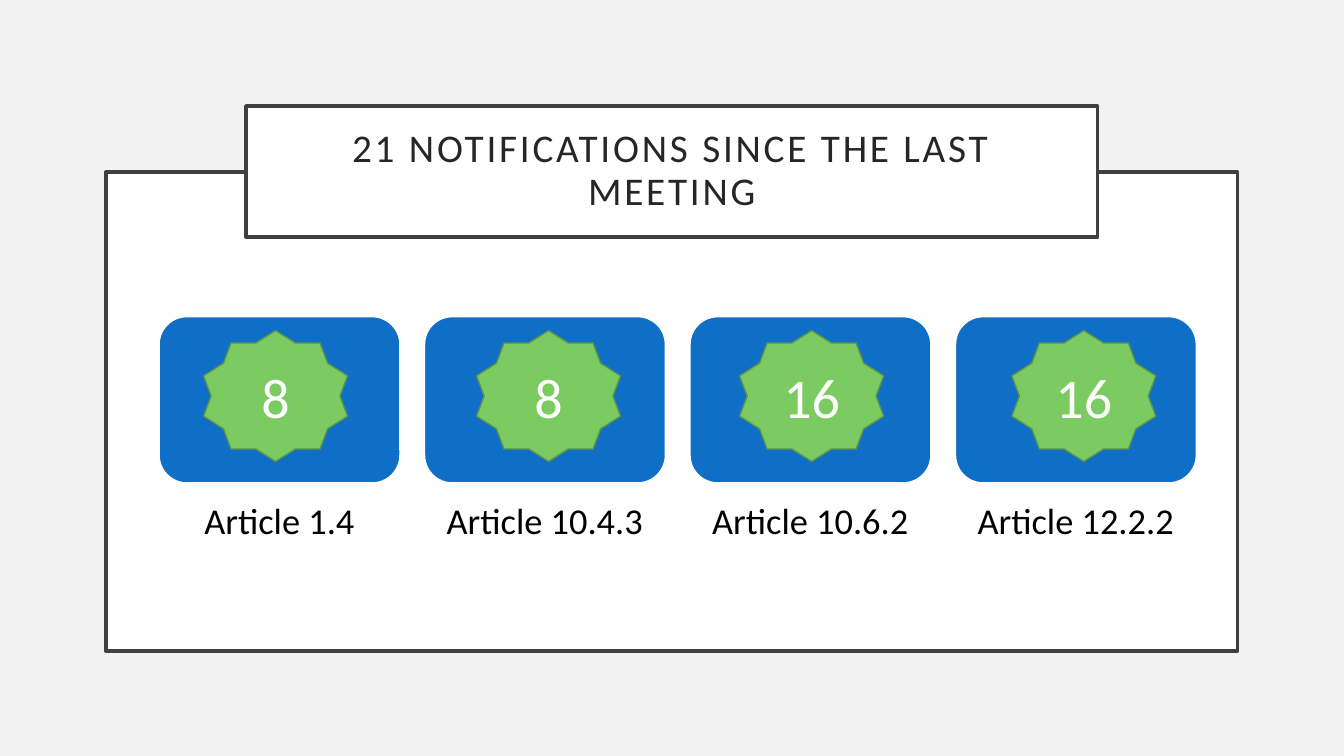
"""Build the slide that counts notifications by article since the last meeting."""
from pptx import Presentation
from pptx.dml.color import RGBColor
from pptx.enum.shapes import MSO_SHAPE
from pptx.enum.text import MSO_ANCHOR, MSO_AUTO_SIZE, PP_ALIGN
from pptx.util import Cm, Pt

RECTANGLE = MSO_SHAPE.RECTANGLE
ROUNDED = MSO_SHAPE.ROUNDED_RECTANGLE
STAR = MSO_SHAPE.STAR_10_POINT
MIDDLE = MSO_ANCHOR.MIDDLE
TOP = MSO_ANCHOR.TOP
CENTER = PP_ALIGN.CENTER
NO_FIT = MSO_AUTO_SIZE.NONE

BACKGROUND = RGBColor(0xF2, 0xF2, 0xF2)
WHITE = RGBColor(0xFF, 0xFF, 0xFF)
BLACK = RGBColor(0x00, 0x00, 0x00)
BORDER = RGBColor(0x40, 0x40, 0x40)
TITLE_TEXT = RGBColor(0x26, 0x26, 0x26)
BLUE = RGBColor(0x0F, 0x6F, 0xC6)
GREEN = RGBColor(0x7C, 0xCA, 0x62)
DARK_GREEN = RGBColor(0x5C, 0x95, 0x49)

FONT = "Calibri"
INSET = Cm(0.51)
CARD_LEFT, CARD_TOP, CARD_WIDTH, CARD_HEIGHT = 4.01, 7.98, 6.07, 4.19
CARD_PITCH = 6.69
ARTICLES = [
    ("Article 1.4", "8", 5.13),
    ("Article 10.4.3", "8", 12.01),
    ("Article 10.6.2", "16", 18.64),
    ("Article 12.2.2", "16", 25.5),
]


def paint(shape, fill, line, width):
    shape.fill.solid()
    shape.fill.fore_color.rgb = fill
    shape.line.color.rgb = line
    shape.line.width = Pt(width)


def write(shape, text, size, color, anchor, spacing):
    frame = shape.text_frame
    frame.word_wrap = True
    frame.auto_size = NO_FIT
    frame.vertical_anchor = anchor
    paragraph = frame.paragraphs[0]
    paragraph.alignment = CENTER
    paragraph.line_spacing = spacing
    run = paragraph.add_run()
    run.text = text
    run.font.name = FONT
    run.font.size = Pt(size)
    run.font.color.rgb = color
    return run


prs = Presentation()
prs.slide_width = Cm(33.87)
prs.slide_height = Cm(19.05)
slide = prs.slides.add_slide(prs.slide_layouts[5])
slide.background.fill.solid()
slide.background.fill.fore_color.rgb = BACKGROUND
shapes = slide.shapes

panel = shapes.add_shape(RECTANGLE, Cm(2.67), Cm(4.34), Cm(28.52), Cm(12.07))
panel.shadow.inherit = False
paint(panel, WHITE, BORDER, 2.5)

title = shapes.title
title.left, title.top, title.width, title.height = Cm(6.2), Cm(2.67), Cm(21.46), Cm(3.3)
paint(title, WHITE, BORDER, 2.5)
heading = title.text_frame
heading.margin_left = heading.margin_right = INSET
heading.margin_top = heading.margin_bottom = INSET
heading_run = write(title, "21 NOTIFICATIONS SINCE THE LAST MEETING", 28, TITLE_TEXT, MIDDLE, 0.9)
heading_run.font._element.set("spc", "200")
panel.element.addnext(title.element)

for index, (article, count, star_left) in enumerate(ARTICLES):
    left = Cm(CARD_LEFT + index * CARD_PITCH)
    card = shapes.add_shape(ROUNDED, left, Cm(CARD_TOP), Cm(CARD_WIDTH), Cm(CARD_HEIGHT))
    card.shadow.inherit = False
    paint(card, BLUE, WHITE, 1)

    label = shapes.add_textbox(left, Cm(CARD_TOP + CARD_HEIGHT), Cm(CARD_WIDTH), Cm(2.26))
    caption = label.text_frame
    caption.margin_left = caption.margin_right = caption.margin_top = INSET
    caption.margin_bottom = 0
    write(label, article, 26, BLACK, TOP, 0.9)

    star = shapes.add_shape(STAR, Cm(star_left), Cm(8.33), Cm(3.63), Cm(3.3))
    star.shadow.inherit = False
    paint(star, GREEN, DARK_GREEN, 1)
    write(star, count, 40, WHITE, MIDDLE, 1.0)

prs.save("out.pptx")
